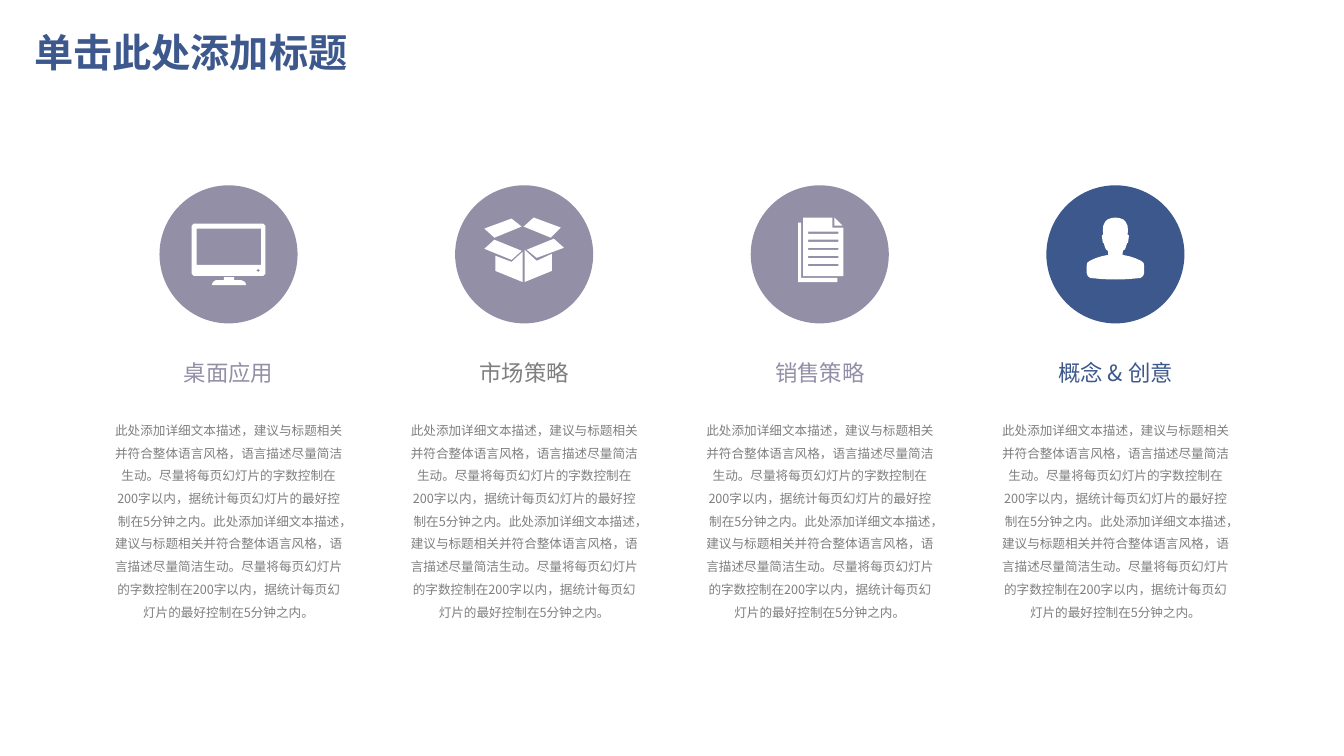
from lxml.etree import SubElement
from pptx import Presentation
from pptx.dml.color import RGBColor
from pptx.enum.shapes import MSO_SHAPE
from pptx.enum.text import MSO_ANCHOR, PP_ALIGN
from pptx.oxml.ns import qn
from pptx.util import Cm, Pt

BLUE = RGBColor(0x3D, 0x58, 0x8C)
MAUVE = RGBColor(0x93, 0x8F, 0xA7)
GREY = RGBColor(0x7F, 0x7F, 0x7F)
WHITE = RGBColor(0xFF, 0xFF, 0xFF)
LATIN_FONT = "Montserrat"
CJK_FONT = "Noto Sans CJK SC"

COLUMN_LEFT, COLUMN_PITCH, COLUMN_WIDTH = 2.9, 7.45, 5.72
CIRCLE_INSET, CIRCLE_TOP, CIRCLE_SIZE = 1.12, 4.67, 3.48
ICON_UNIT = Cm(0.00254)
STEPS = 10

SENTENCES = (
    "此处添加详细文本描述，建议与标题相关并符合整体语言风格，语言描述尽量简洁生动。"
    "尽量将每页幻灯片的字数控制在200字以内，据统计每页幻灯片的最好控制在5分钟之内。"
)
BODY = SENTENCES * 2


def box(left, top, right, bottom):
    return [(left, top), (right, top), (right, bottom), (left, bottom)]


def mirrored(half, axis):
    right = [(axis + x, y) for x, y in half]
    left = [(axis - x, y) for x, y in reversed(half)]
    return right + left


MONITOR = [
    [
        [(34, 38), (103, 38), (105, 40), (105, 88), (103, 90),
         (34, 90), (32, 88), (32, 40)],
        box(37, 43, 101, 79),
        [(98, 83), (100, 84.5), (98, 86), (96, 84.5)],
    ],
    [[(52, 99), (53, 96), (56, 94), (64, 94), (64, 91), (74, 91),
      (74, 94), (81, 94), (85, 96), (86, 99)]],
]
CARTON = [
    [[(66, 41), (56, 33), (29, 43), (39, 52)]],
    [[(69, 64), (69, 96), (96, 85), (96, 68), (81, 75)]],
    [[(71, 64), (81, 72), (108, 62), (98, 53)]],
    [[(105, 42), (78, 32), (68, 41), (95, 52)]],
    [[(40, 70), (40, 85), (67, 96), (67, 66), (56, 76)]],
    [[(66, 65), (39, 54), (29, 63), (56, 74)]],
]
DOCUMENT = [
    [[(52, 32), (81, 32), (81, 42), (92, 42), (92, 90), (52, 90)]]
    + [box(57, y, 87, y + 2.2) for y in range(46, 79, 8)],
    [[(83, 32), (83, 40), (91, 40)]],
    [[(47, 37), (50, 37), (50, 92), (86, 92), (86, 96), (47, 96)]],
]
PERSON = [[mirrored([
    (0, 32), (4, 32.5), (8, 34), (10, 36), (12, 40), (12.5, 45), (12, 49),
    (12.5, 49), (13.5, 50), (12.5, 57), (11.5, 57.5), (10.5, 61),
    (9.5, 63.5), (7.5, 65), (7, 69), (14, 70.5), (20, 72.5), (25.5, 75),
    (28, 77), (28.5, 80), (28.5, 87), (27.5, 90), (25, 92), (12, 93.2),
    (0, 93.5),
], 68.5)]]

COLUMNS = [
    ("桌面应用", MAUVE, MAUVE, MONITOR),
    ("市场策略", GREY, MAUVE, CARTON),
    ("销售策略", MAUVE, MAUVE, DOCUMENT),
    ("概念 & 创意", BLUE, BLUE, PERSON),
]


def add_run(p, text, size, color, font=CJK_FONT, bold=False):
    r = p.add_run()
    r.text = text
    r.font.size = Pt(size)
    r.font.bold = bold
    r.font.color.rgb = color
    r.font.name = font
    SubElement(r.font._element, qn("a:ea")).set("typeface", CJK_FONT)


def set_title(s, text):
    sp = s.shapes.title
    sp.left, sp.top, sp.width, sp.height = Cm(0.61), Cm(0.61), Cm(29.21), Cm(1.52)
    sp.text_frame.vertical_anchor = MSO_ANCHOR.MIDDLE
    p = sp.text_frame.paragraphs[0]
    p.alignment = PP_ALIGN.LEFT
    p.line_spacing = 0.9
    add_run(p, text, 28, BLUE, LATIN_FONT, True)


def add_text(s, left, top, height, text, size, color, line_spacing):
    sp = s.shapes.add_textbox(Cm(left), Cm(top), Cm(COLUMN_WIDTH), Cm(height))
    tf = sp.text_frame
    tf.word_wrap = True
    tf.margin_left = tf.margin_right = tf.margin_top = tf.margin_bottom = 0
    p = tf.paragraphs[0]
    p.alignment = PP_ALIGN.CENTER
    p.line_spacing = Pt(line_spacing)
    add_run(p, text, size, color)


def paint(sp, color):
    sp.shadow.inherit = False
    sp.fill.solid()
    sp.fill.fore_color.rgb = color
    sp.line.fill.background()


def add_circle(s, left, color):
    sp = s.shapes.add_shape(MSO_SHAPE.OVAL, Cm(left), Cm(CIRCLE_TOP),
                            Cm(CIRCLE_SIZE), Cm(CIRCLE_SIZE))
    paint(sp, color)


def add_icon(s, left, parts):
    group = s.shapes.add_group_shape()
    for contours in parts:
        scaled = [[(x * STEPS, y * STEPS) for x, y in c] for c in contours]
        builder = group.shapes.build_freeform(*scaled[0][0], scale=ICON_UNIT)
        builder.add_line_segments(scaled[0][1:], close=True)
        for hole in scaled[1:]:
            builder.move_to(*hole[0])
            builder.add_line_segments(hole[1:], close=True)
        paint(builder.convert_to_shape(Cm(left), Cm(CIRCLE_TOP)), WHITE)


def add_column(s, left, heading, heading_color, circle_color, icon):
    add_text(s, left, 10.46, 5.11, BODY, 9, GREY, 16.25)
    add_text(s, left, 9.09, 1.04, heading, 16, heading_color, 18)
    add_circle(s, left + CIRCLE_INSET, circle_color)
    add_icon(s, left + CIRCLE_INSET, icon)


def main():
    prs = Presentation()
    prs.slide_width, prs.slide_height = Cm(33.87), Cm(19.05)
    s = prs.slides.add_slide(prs.slide_layouts[5])
    set_title(s, "单击此处添加标题")
    for i, column in enumerate(COLUMNS):
        add_column(s, COLUMN_LEFT + i * COLUMN_PITCH, *column)
    prs.save("out.pptx")


if __name__ == "__main__":
    main()
